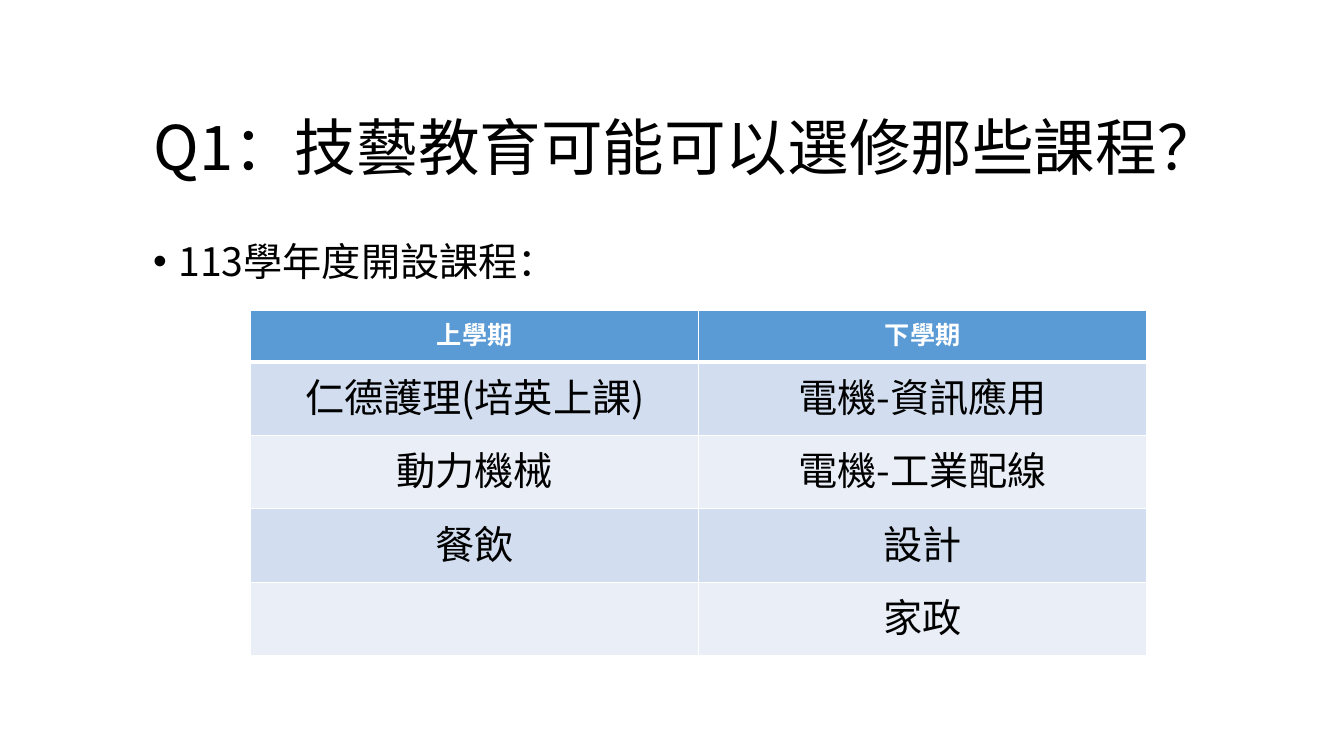
import pptx
import pptx.dml.color
import pptx.enum.text
import pptx.oxml
import pptx.oxml.ns
import pptx.util
from pptx.util import Cm, Pt

ALIGN = pptx.enum.text.PP_ALIGN
ANCHOR = pptx.enum.text.MSO_ANCHOR
NS = pptx.oxml.ns.nsdecls("a")


def color(value):
    return pptx.dml.color.RGBColor.from_string(value)


def add_run(paragraph, text, size, latin, asian, ink="000000", bold=False):
    run = paragraph.add_run()
    run.text = text
    run.font.size = Pt(size)
    run.font.bold = bold
    run.font.color.rgb = color(ink)
    run.font.name = latin
    run.font._element.append(
        pptx.oxml.parse_xml(f'<a:ea {NS} typeface="{asian}"/>'))


deck = pptx.Presentation()
deck.slide_width, deck.slide_height = Cm(33.87), Cm(19.05)
slide = deck.slides.add_slide(deck.slide_layouts[5])

SC, JP = "Noto Sans CJK SC", "Noto Sans CJK JP"

# Title
question = slide.shapes.title
question.left, question.top = Cm(3.61), Cm(1.96)
question.width, question.height = Cm(29.21), Cm(3.68)
question.text_frame.auto_size = pptx.enum.text.MSO_AUTO_SIZE.NONE
question.text_frame.vertical_anchor = ANCHOR.MIDDLE
heading = question.text_frame.paragraphs[0]
heading.alignment = ALIGN.LEFT
heading.line_spacing = 0.9
add_run(heading, "Q1：技藝教育可能可以選修那些課程？", 44, SC, SC)

# Bulleted lead-in
school_year = slide.shapes.add_textbox(Cm(3.61), Cm(5.99), Cm(12.78), Cm(1.8))
school_year.text_frame.word_wrap = True
lead_in = school_year.text_frame.paragraphs[0]
bullet_props = lead_in._p.get_or_add_pPr()
bullet_props.set("marL", str(Cm(0.64)))
bullet_props.set("indent", str(-Cm(0.64)))
for bullet_xml in (f'<a:buFont {NS} typeface="Arial"/>', f'<a:buChar {NS} char="•"/>'):
    bullet_props.append(pptx.oxml.parse_xml(bullet_xml))
lead_in.line_spacing = 0.9
add_run(lead_in, "113學年度開設課程：", 28, SC, SC)

# Course table: one column per semester
courses = [
    ("上學期", "下學期"),
    ("仁德護理(培英上課)", "電機-資訊應用"),
    ("動力機械", "電機-工業配線"),
    ("餐飲", "設計"),
    ("", "家政"),
]
timetable = slide.shapes.add_table(
    len(courses), 2, Cm(6.32), Cm(7.82), Cm(22.58), Cm(8.7)).table
for column in timetable.columns:
    column.width = Cm(11.29)

for r, semester_courses in enumerate(courses):
    is_header = r == 0
    timetable.rows[r].height = Cm(1.3 if is_header else 1.85)
    fill = "5B9BD5" if is_header else ("EAEFF7", "D2DEEF")[r % 2]
    # The rule under the header is heavier than the rest
    widths = {"L": 1, "R": 1, "T": 3 if r == 1 else 1, "B": 3 if is_header else 1}
    for c, course in enumerate(semester_courses):
        cell = timetable.cell(r, c)
        cell_props = cell._tc.get_or_add_tcPr()
        for side, width in widths.items():
            cell_props.append(pptx.oxml.parse_xml(
                f'<a:ln{side} {NS} w="{Pt(width)}"><a:solidFill>'
                f'<a:srgbClr val="FFFFFF"/></a:solidFill></a:ln{side}>'))
        cell.fill.solid()
        cell.fill.fore_color.rgb = color(fill)
        entry = cell.text_frame.paragraphs[0]
        entry.alignment = ALIGN.CENTER
        if is_header:
            add_run(entry, course, 18, "Calibri", JP, "FFFFFF", True)
        elif course:
            add_run(entry, course, 28, JP, JP)

deck.save("out.pptx")
